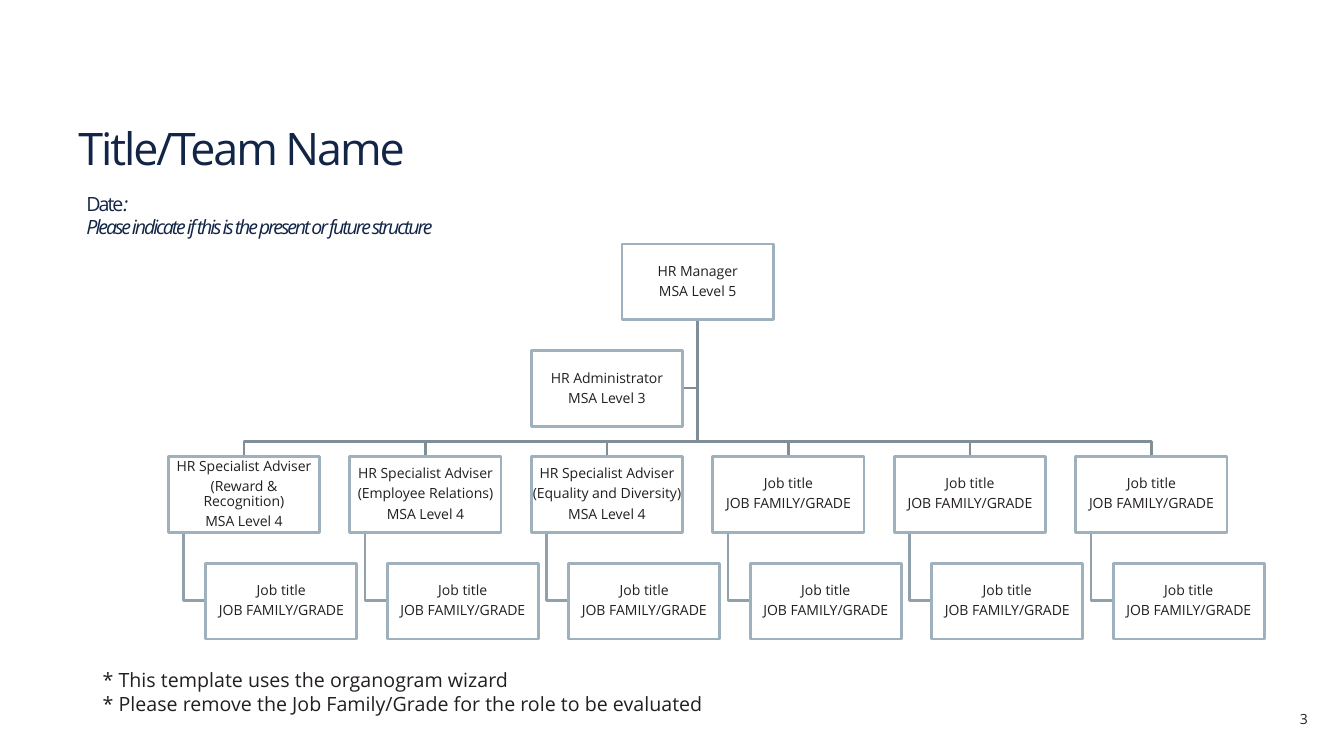
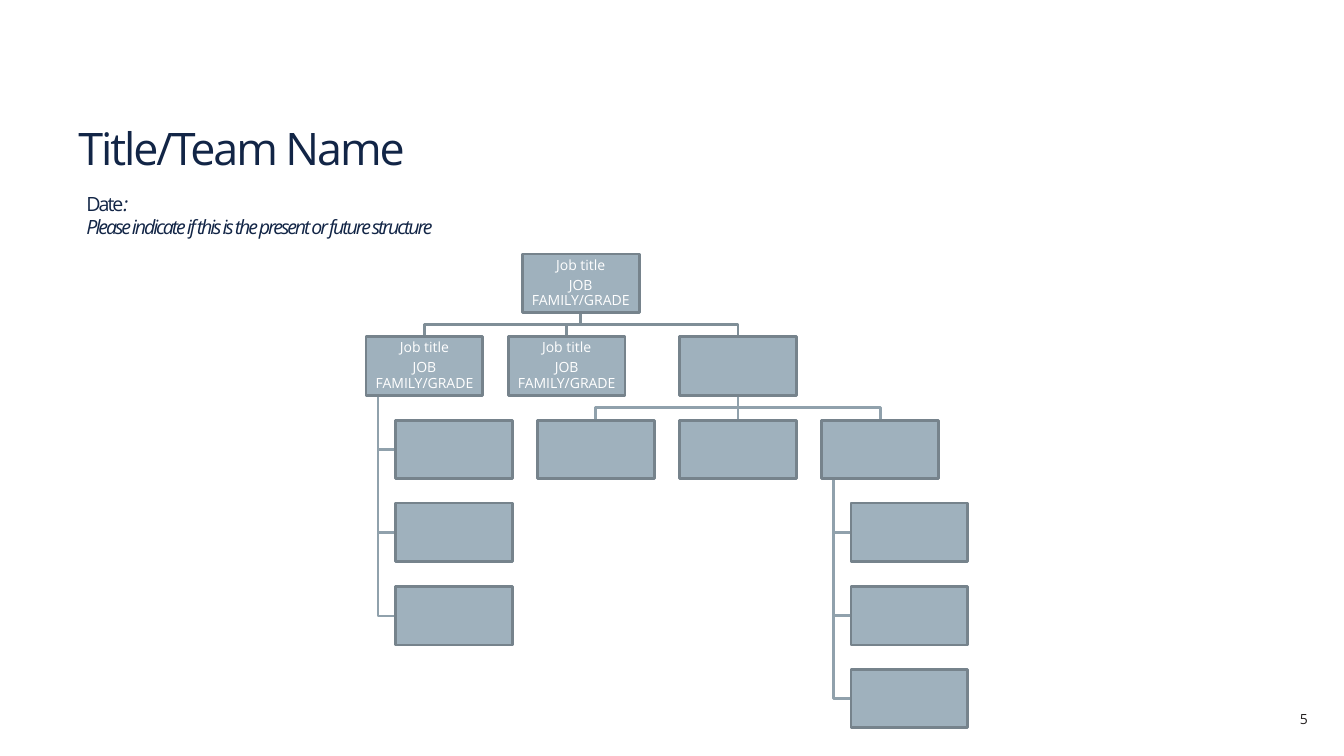
from lxml import etree
from pptx import Presentation
from pptx.dml.color import RGBColor
from pptx.enum.shapes import MSO_CONNECTOR, MSO_SHAPE
from pptx.enum.text import MSO_ANCHOR, PP_ALIGN
from pptx.oxml.ns import qn
from pptx.util import Pt

PX = 9144
FONT = "Open Sans"
NAVY = RGBColor(0x12, 0x25, 0x46)
INK = RGBColor(0x23, 0x1F, 0x20)
WHITE = RGBColor(0xFF, 0xFF, 0xFF)
BLUE_GREY = RGBColor(0x9F, 0xB1, 0xBD)
SLATE = RGBColor(0x76, 0x83, 0x8C)
UPPER_LINK = RGBColor(0x7F, 0x8E, 0x97)
LOWER_LINK = RGBColor(0x90, 0xA1, 0xAC)
RECTANGLE = MSO_SHAPE.RECTANGLE
STRAIGHT = MSO_CONNECTOR.STRAIGHT
LEFT, CENTER, RIGHT = PP_ALIGN.LEFT, PP_ALIGN.CENTER, PP_ALIGN.RIGHT
MIDDLE, BOTTOM = MSO_ANCHOR.MIDDLE, MSO_ANCHOR.BOTTOM


def style_text(frame, size, color, align=LEFT, tracking=None):
    frame.word_wrap = True
    for paragraph in frame.paragraphs:
        paragraph.alignment = align
        for run in paragraph.runs:
            run.font.name = FONT
            run.font.size = Pt(size)
            run.font.color.rgb = color
            if tracking:
                run._r.get_or_add_rPr().set("spc", str(tracking))


def add_link(slide, points, color):
    if len(points) == 2:
        ends = [value * PX for point in points for value in point]
        link = slide.shapes.add_connector(STRAIGHT, *ends)
    else:
        outline = slide.shapes.build_freeform(*points[0], scale=PX)
        outline.add_line_segments(points[1:], close=False)
        link = outline.convert_to_shape()
        link.fill.background()
    link.line.color.rgb = color
    link.line.width = Pt(2)
    etree.SubElement(link._element.spPr, qn("a:effectLst"))


prs = Presentation()
prs.slide_width, prs.slide_height = 1333 * PX, 750 * PX
slides = []

for page in ("3", "5"):
    slide = prs.slides.add_slide(prs.slide_layouts[6])
    slides.append(slide)

    number = slide.shapes.add_textbox(1202 * PX, 700 * PX, 105 * PX, 27 * PX).text_frame
    number.text = page
    style_text(number, 10, INK, RIGHT)

    title = slide.shapes.add_textbox(68 * PX, 76 * PX, 1186 * PX, 102 * PX).text_frame
    title.text = "Title/Team Name"
    title.vertical_anchor = BOTTOM
    style_text(title, 32, NAVY, tracking=-150)

    status = slide.shapes.add_textbox(76 * PX, 185 * PX, 1084 * PX, 57 * PX).text_frame
    status.text = "Date\nPlease indicate if this is the present or future structure"
    date, hint = status.paragraphs
    colon = date.add_run()
    colon.text = ":"
    colon.font.italic = True
    hint.runs[0].font.italic = True
    style_text(status, 14, NAVY, tracking=-150)

team_slide, blank_slide = slides
JOB = "Job title\nJOB FAMILY/GRADE"

advisers = [
    f"HR Specialist Adviser\n({area})\nMSA Level 4"
    for area in ("Reward & Recognition", "Employee Relations", "Equality and Diversity")
] + [JOB] * 3
team_x = [167 + 180 * column for column in range(6)]
manager_x = (team_x[0] + team_x[-1]) // 2
trunk = manager_x + 75
team_boxes = [
    (manager_x, 242, "HR Manager\nMSA Level 5"),
    (team_x[2], 348, "HR Administrator\nMSA Level 3"),
]
add_link(team_slide, [(trunk, 317), (trunk, 385), (team_x[2] + 150, 385)], UPPER_LINK)
for x, adviser in zip(team_x, advisers):
    add_link(team_slide, [(trunk, 317), (trunk, 438), (x + 75, 438), (x + 75, 453)], UPPER_LINK)
    add_link(team_slide, [(x + 15, 528), (x + 15, 596), (x + 37, 596)], LOWER_LINK)
    team_boxes += [(x, 453, adviser), (x + 37, 559, JOB)]

row_y = [252 + 165 * row // 2 for row in range(6)]
first_x, root_x, branch_x = 363, 518, 674
report_x = [branch_x + 141 * step for step in (-1, 0, 1)]
blank_boxes = [(root_x, row_y[0], JOB)]
families = [
    (root_x, 0, [(first_x, JOB), (first_x + 141, JOB), (branch_x, "")], UPPER_LINK),
    (branch_x, 1, [(x, "") for x in report_x], LOWER_LINK),
]
for parent_x, row, children, color in families:
    start, bottom, top = parent_x + 58, row_y[row] + 58, row_y[row + 1]
    bus = (bottom + top) // 2
    for x, label in children:
        end = x + 58
        bends = [(start, bus), (end, bus)] if end != start else []
        add_link(blank_slide, [(start, bottom), *bends, (end, top)], color)
        blank_boxes.append((x, top, label))

for parent_x, row in ((first_x, 1), (report_x[-1], 2)):
    spine, child_x = parent_x + 12, parent_x + 29
    for y in row_y[row + 1:row + 4]:
        add_link(blank_slide, [(spine, row_y[row] + 58), (spine, y + 29), (child_x, y + 29)], LOWER_LINK)
        blank_boxes.append((child_x, y, ""))

charts = [
    (team_slide, team_boxes, 150, 75, WHITE, BLUE_GREY, INK),
    (blank_slide, blank_boxes, 116, 58, BLUE_GREY, SLATE, WHITE),
]
for slide, boxes, width, height, fill, border, ink in charts:
    for x, y, label in boxes:
        post = slide.shapes.add_shape(RECTANGLE, x * PX, y * PX, width * PX, height * PX)
        post.shadow.inherit = False
        post.fill.solid()
        post.fill.fore_color.rgb = fill
        post.line.color.rgb = border
        post.line.width = Pt(2)
        if label:
            frame = post.text_frame
            frame.text = label
            frame.vertical_anchor = MIDDLE
            frame.margin_left = frame.margin_right = PX
            frame.margin_top = frame.margin_bottom = PX
            style_text(frame, 10, ink, CENTER)
            for paragraph in frame.paragraphs:
                paragraph.line_spacing = 0.9
                paragraph.space_after = Pt(3.5)

notes = team_slide.shapes.add_textbox(92 * PX, 658 * PX, 1166 * PX, 57 * PX).text_frame
notes.text = (
    "* This template uses the organogram wizard\n"
    "* Please remove the Job Family/Grade for the role to be evaluated"
)
style_text(notes, 14, INK)

prs.save("out.pptx")
